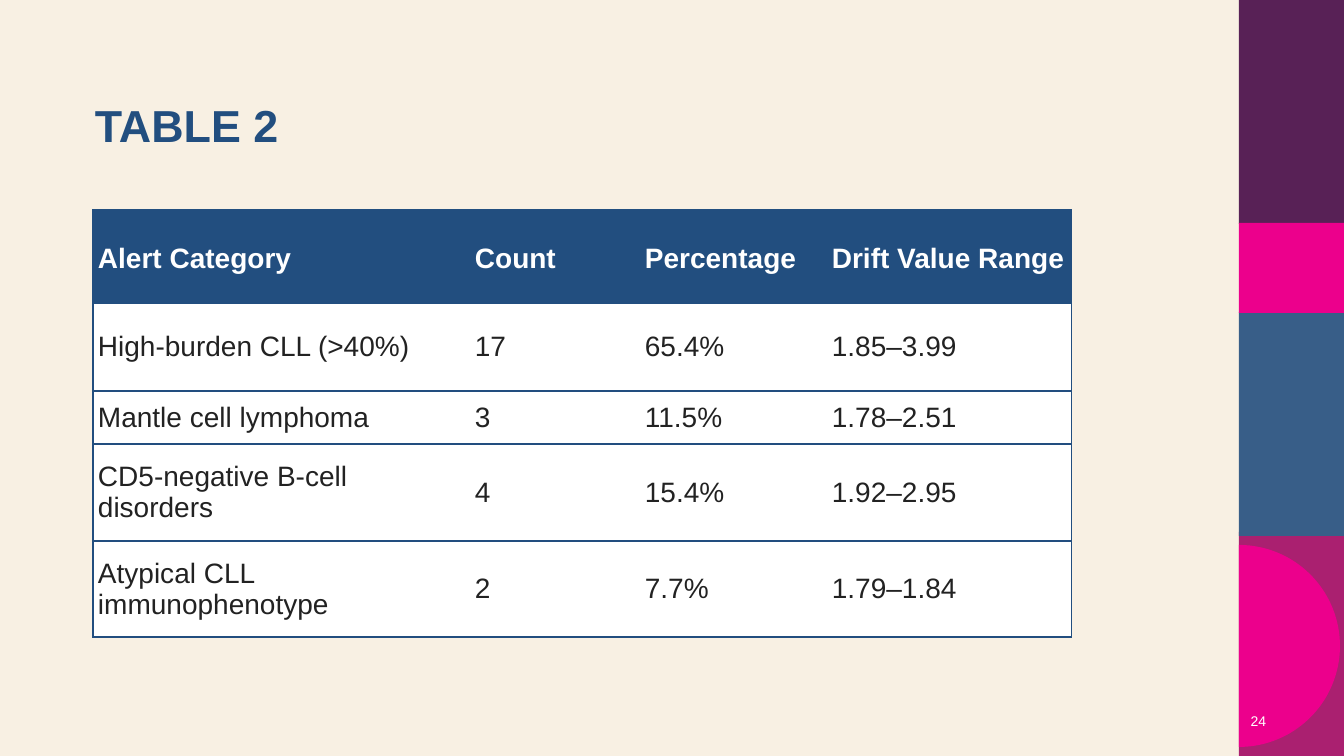
"""Build the slide with the table of alert categories and the coloured side strip."""
from math import cos, pi, sin

from lxml.etree import SubElement
from pptx import Presentation
from pptx.dml.color import RGBColor
from pptx.enum.shapes import MSO_SHAPE as SHAPE
from pptx.enum.text import MSO_ANCHOR as ANCHOR, PP_ALIGN as ALIGN
from pptx.oxml.ns import qn
from pptx.util import Emu, Pt

PX = 914400 / 100.8
CREAM = RGBColor(0xF8, 0xF0, 0xE3)
NAVY = RGBColor(0x22, 0x4E, 0x7F)
STEEL = RGBColor(0x38, 0x5E, 0x88)
PLUM = RGBColor(0x58, 0x21, 0x56)
PINK = RGBColor(0xEC, 0x00, 0x8C)
BERRY = RGBColor(0xAA, 0x20, 0x70)
INK = RGBColor(0x22, 0x22, 0x22)
WHITE = RGBColor(0xFF, 0xFF, 0xFF)


def px(*lengths):
    return [Emu(round(length * PX)) for length in lengths]


def write(frame, text, size, color, bold=False, align=ALIGN.LEFT, spacing=1.0):
    frame.word_wrap = True
    paragraph = frame.paragraphs[0]
    paragraph.alignment = align
    paragraph.line_spacing = spacing
    run = paragraph.add_run()
    run.text = text
    run.font.name = "Arial"
    run.font.size = Pt(size)
    run.font.bold = bold
    run.font.color.rgb = color


deck = Presentation()
deck.slide_width, deck.slide_height = px(1344, 756)
slide = deck.slides.add_slide(deck.slide_layouts[6])
slide.background.fill.solid()
slide.background.fill.fore_color.rgb = CREAM

STRIP_LEFT, STRIP_WIDTH = 1239, 105
strip_parts = []
for top, height, color in [(532, 224, BERRY), (312, 224, STEEL), (0, 224, PLUM), (223, 90, PINK)]:
    block = slide.shapes.add_shape(SHAPE.RECTANGLE, *px(STRIP_LEFT, top, STRIP_WIDTH, height))
    strip_parts.append((block, color))

CENTER_Y, RADIUS, STEPS = 646, 101, 90
arc = []
for step in range(STEPS + 1):
    angle = pi * step / STEPS - pi / 2
    arc.append(tuple(px(STRIP_LEFT + RADIUS * cos(angle), CENTER_Y + RADIUS * sin(angle))))
outline = slide.shapes.build_freeform(*arc[0])
outline.add_line_segments(arc[1:], close=True)
strip_parts.append((outline.convert_to_shape(), PINK))

for part, color in strip_parts:
    part.shadow.inherit = False
    part.fill.solid()
    part.fill.fore_color.rgb = color
    part.line.fill.background()

title = slide.shapes.add_textbox(*px(85, 99, 1035, 87)).text_frame
write(title, "TABLE 2", 32, NAVY, bold=True, spacing=0.9)

page_number = slide.shapes.add_textbox(*px(1226, 701, 50, 40)).text_frame
page_number.vertical_anchor = ANCHOR.MIDDLE
write(page_number, "24", 10, WHITE, align=ALIGN.RIGHT)

ALERTS = [
    ("Alert Category", "Count", "Percentage", "Drift Value Range"),
    ("High-burden CLL (>40%)", "17", "65.4%", "1.85–3.99"),
    ("Mantle cell lymphoma", "3", "11.5%", "1.78–2.51"),
    ("CD5-negative B-cell disorders", "4", "15.4%", "1.92–2.95"),
    ("Atypical CLL immunophenotype", "2", "7.7%", "1.79–1.84"),
]
COLUMN_WIDTHS = [377, 170, 187, 245]
ROW_HEIGHTS = [93, 88, 53, 97, 96]

alerts = slide.shapes.add_table(
    len(ROW_HEIGHTS), len(COLUMN_WIDTHS),
    *px(93, 210, sum(COLUMN_WIDTHS), sum(ROW_HEIGHTS))).table
alerts.horz_banding = False
for column, width in zip(alerts.columns, px(*COLUMN_WIDTHS)):
    column.width = width
for row, height in zip(alerts.rows, px(*ROW_HEIGHTS)):
    row.height = height

last_column = len(COLUMN_WIDTHS) - 1
for r, values in enumerate(ALERTS):
    is_header = r == 0
    for c, value in enumerate(values):
        cell = alerts.cell(r, c)
        cell.vertical_anchor = ANCHOR.MIDDLE
        cell.margin_left, cell.margin_right, cell.margin_top, cell.margin_bottom = px(
            5, 5, 7 if is_header else 3, 3)
        properties = cell._tc.get_or_add_tcPr()
        edges = {"L": c == 0, "R": c == last_column, "T": True, "B": True}
        for edge, visible in edges.items():
            border = SubElement(properties, qn(f"a:ln{edge}"), w=str(Pt(1)))
            if visible:
                border_fill = SubElement(border, qn("a:solidFill"))
                SubElement(border_fill, qn("a:srgbClr"), val=str(NAVY))
            else:
                SubElement(border, qn("a:noFill"))
        cell.fill.solid()
        cell.fill.fore_color.rgb = NAVY if is_header else WHITE
        write(cell.text_frame, value, 20, WHITE if is_header else INK, bold=is_header)

deck.save("out.pptx")
